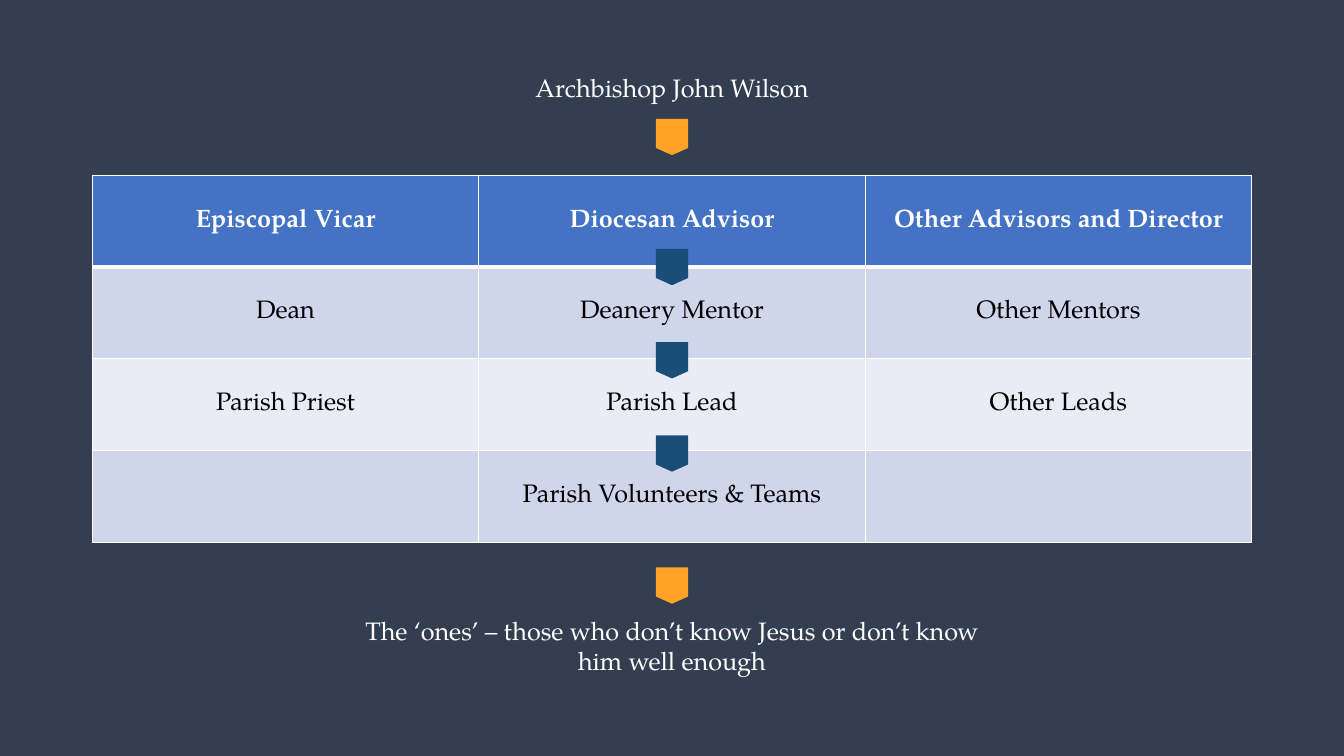
"""Builds a slide showing the chain of parish mission roles."""
import pptx
import pptx.dml.color
import pptx.enum.shapes
import pptx.enum.text
import pptx.oxml
import pptx.oxml.ns
import pptx.util

RGBColor = pptx.dml.color.RGBColor
Inches = pptx.util.Inches
Pt = pptx.util.Pt

SLATE = RGBColor(0x33, 0x3F, 0x50)
WHITE = RGBColor(0xFF, 0xFF, 0xFF)
BLACK = RGBColor(0, 0, 0)
HEADER_BLUE = RGBColor(0x44, 0x72, 0xC4)
BANDS = [RGBColor(0xE9, 0xEB, 0xF5), RGBColor(0xCF, 0xD5, 0xEA)]
ORANGE = RGBColor(0xFF, 0xA2, 0x25)
NAVY = RGBColor(0x1A, 0x4D, 0x77)
FONT = "TeX Gyre Pagella"

ROLES = [
    ["Episcopal Vicar", "Diocesan Advisor", "Other Advisors and Director"],
    ["Dean", "Deanery Mentor", "Other Mentors"],
    ["Parish Priest", "Parish Lead", "Other Leads"],
    ["", "Parish Volunteers & Teams", ""],
]
CAPTIONS = [
    ("Archbishop John Wilson", 0.67, 0.4),
    ("The ‘ones’ – those who don’t know Jesus or don’t know him well enough", 6.05, 0.71),
]
SLIDE_WIDTH, SLIDE_HEIGHT = 13.33, 7.5
TABLE_TOP, TABLE_WIDTH, ROW_HEIGHT = 1.74, 11.5, 0.91
CAPTION_WIDTH = 6.39
MARKER_WIDTH, MARKER_HEIGHT = 0.32, 0.36
MARKERS = [(1.18, ORANGE), (5.63, ORANGE)]
MARKERS += [(2.47 + 0.925 * step, NAVY) for step in range(len(ROLES) - 1)]


def centred(width):
    return Inches((SLIDE_WIDTH - width) / 2)


def style_text(frame, color, bold=False):
    para = frame.paragraphs[0]
    para.alignment = pptx.enum.text.PP_ALIGN.CENTER
    para.font.size = Pt(18)
    for span in para.runs:
        span.font.name = FONT
        span.font.size = Pt(18)
        span.font.bold = bold
        span.font.color.rgb = color


def add_borders(cell, row):
    properties = cell._tc.get_or_add_tcPr()
    top = 3 if row == 1 else 1
    bottom = 3 if row == 0 else 1
    sides = [("lnL", 1), ("lnR", 1), ("lnT", top), ("lnB", bottom)]
    for place, (side, width) in enumerate(sides):
        border = pptx.oxml.parse_xml(
            f'<a:{side} {pptx.oxml.ns.nsdecls("a")} w="{Pt(width)}">'
            f'<a:solidFill><a:srgbClr val="{WHITE}"/></a:solidFill></a:{side}>')
        properties.insert(place, border)


def add_roles(page):
    frame = page.shapes.add_table(
        len(ROLES), len(ROLES[0]), centred(TABLE_WIDTH), Inches(TABLE_TOP),
        Inches(TABLE_WIDTH), Inches(ROW_HEIGHT * len(ROLES)))
    for row, roles in enumerate(ROLES):
        for column, role in enumerate(roles):
            cell = frame.table.cell(row, column)
            cell.text_frame.text = role
            cell.vertical_anchor = pptx.enum.text.MSO_ANCHOR.MIDDLE
            cell.fill.solid()
            cell.fill.fore_color.rgb = BANDS[row % 2] if row else HEADER_BLUE
            style_text(cell.text_frame, BLACK if row else WHITE, row == 0)
            add_borders(cell, row)


def add_caption(page, text, top, height):
    box = page.shapes.add_textbox(
        centred(CAPTION_WIDTH), Inches(top), Inches(CAPTION_WIDTH), Inches(height))
    box.text_frame.word_wrap = True
    box.text_frame.text = text
    style_text(box.text_frame, WHITE)


def add_marker(page, top, color):
    marker = page.shapes.add_shape(
        pptx.enum.shapes.MSO_SHAPE.FLOWCHART_OFFPAGE_CONNECTOR,
        centred(MARKER_WIDTH), Inches(top), Inches(MARKER_WIDTH), Inches(MARKER_HEIGHT))
    marker.shadow.inherit = False
    marker.fill.solid()
    marker.fill.fore_color.rgb = color
    marker.line.fill.background()


def main():
    deck = pptx.Presentation()
    deck.slide_width = Inches(SLIDE_WIDTH)
    deck.slide_height = Inches(SLIDE_HEIGHT)
    page = deck.slides.add_slide(deck.slide_layouts[6])
    page.background.fill.solid()
    page.background.fill.fore_color.rgb = SLATE
    add_roles(page)
    for caption in CAPTIONS:
        add_caption(page, *caption)
    for marker in MARKERS:
        add_marker(page, *marker)
    deck.save("out.pptx")


if __name__ == "__main__":
    main()
